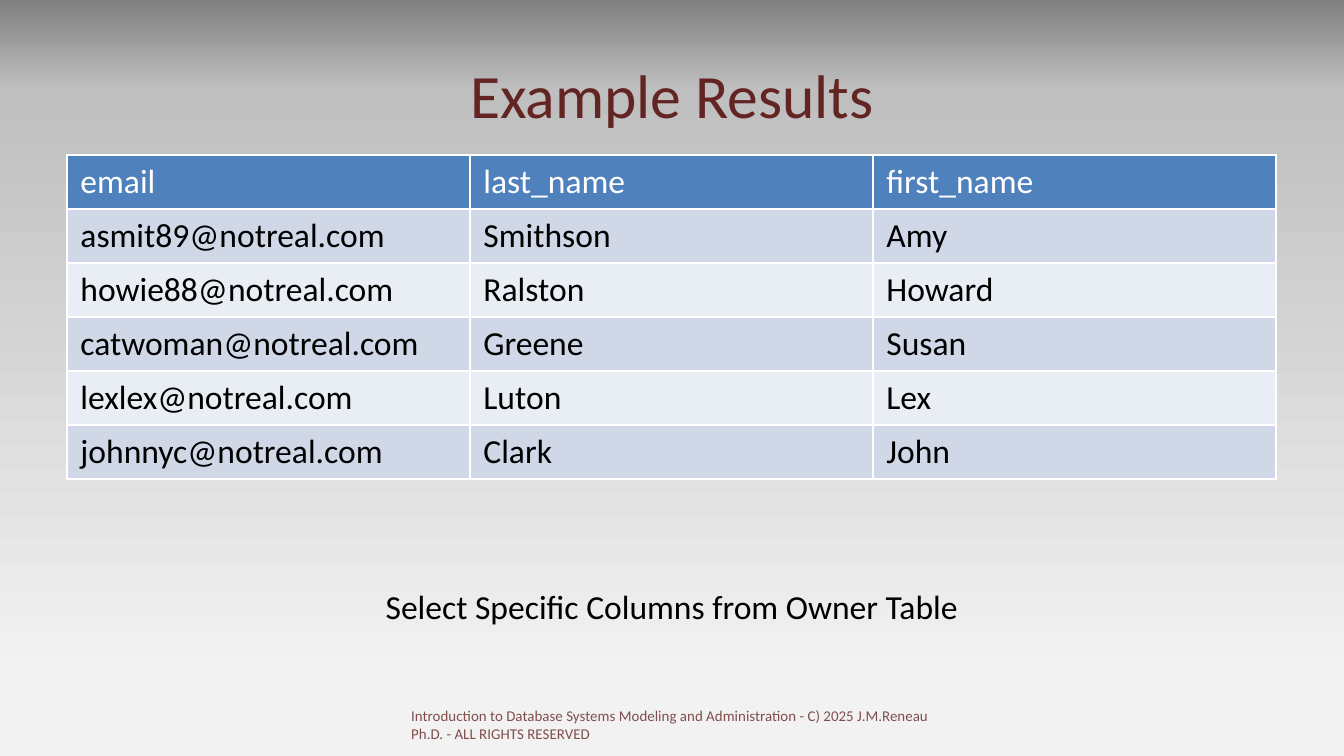
from dataclasses import dataclass

from lxml import etree
from pptx import Presentation
from pptx.dml.color import RGBColor
from pptx.enum.text import MSO_ANCHOR, PP_ALIGN
from pptx.oxml.ns import qn
from pptx.slide import Slide
from pptx.table import _Cell
from pptx.util import Pt

LEFT, CENTER = PP_ALIGN.LEFT, PP_ALIGN.CENTER
TOP, MIDDLE = MSO_ANCHOR.TOP, MSO_ANCHOR.MIDDLE
EMU_PER_PX = 914400 / 134.4
BLANK_LAYOUT = 6


@dataclass(frozen=True)
class Theme:
    font: str = "Calibri"
    title_size: int = 33
    body_size: int = 18
    footer_size: int = 8
    maroon: str = "632523"
    black: str = "000000"
    white: str = "FFFFFF"
    header_fill: str = "4F81BD"
    band_fills: tuple[str, str] = ("D0D8E8", "E9EDF4")
    border_width: int = 1
    # Position in percent and colour, from top to bottom
    background: tuple[tuple[int, str], ...] = (
        (0, "808080"), (12, "BFBFBF"), (90, "F2F2F2"))


@dataclass(frozen=True)
class Label:
    text: str
    left: int
    top: int
    width: int
    height: int
    size: int
    color: str
    align: PP_ALIGN = CENTER
    anchor: MSO_ANCHOR = TOP
    opacity: int = 100


THEME = Theme()

LABELS = (
    Label("Example Results", 67, 31, 1210, 126,
          THEME.title_size, THEME.maroon, anchor=MIDDLE),
    Label("Select Specific Columns from Owner Table", 67, 579, 1210, 75,
          THEME.body_size, THEME.black),
    Label("Introduction to Database Systems Modeling and Administration"
          " - C) 2025 J.M.Reneau Ph.D. - ALL RIGHTS RESERVED",
          398, 700, 546, 40, THEME.footer_size, THEME.maroon, LEFT,
          opacity=80),
)

OWNERS = (
    ("email", "last_name", "first_name"),
    ("asmit89@notreal.com", "Smithson", "Amy"),
    ("howie88@notreal.com", "Ralston", "Howard"),
    ("catwoman@notreal.com", "Greene", "Susan"),
    ("lexlex@notreal.com", "Luton", "Lex"),
    ("johnnyc@notreal.com", "Clark", "John"),
)
TABLE_LEFT, TABLE_TOP = 67, 155
COLUMN_WIDTH, ROW_HEIGHT = 403, 54


def px(length: int) -> int:
    return round(length * EMU_PER_PX)


def paint_background(slide: Slide) -> None:
    fill = slide.background.fill
    fill.gradient()
    fill.gradient_angle = 270
    stops = slide.element.find(".//" + qn("a:gsLst"))
    for stop in list(stops):
        stops.remove(stop)
    for position, color in THEME.background:
        stop = etree.SubElement(stops, qn("a:gs"), pos=str(position * 1000))
        etree.SubElement(stop, qn("a:srgbClr"), val=color)


def style_paragraph(paragraph, size: int, color: str, align: PP_ALIGN) -> None:
    paragraph.alignment = align
    paragraph.font.name = THEME.font
    paragraph.font.size = Pt(size)
    paragraph.font.color.rgb = RGBColor.from_string(color)


def add_label(slide: Slide, label: Label) -> None:
    shape = slide.shapes.add_textbox(
        px(label.left), px(label.top), px(label.width), px(label.height))
    frame = shape.text_frame
    frame.word_wrap = True
    frame.vertical_anchor = label.anchor
    frame.text = label.text
    style_paragraph(frame.paragraphs[0], label.size, label.color, label.align)
    if label.opacity < 100:
        for color in shape.element.iter(qn("a:srgbClr")):
            etree.SubElement(color, qn("a:alpha"),
                             val=str(label.opacity * 1000))


def add_borders(cell: _Cell) -> None:
    properties = cell._tc.get_or_add_tcPr()
    # Border lines come before the fill in the cell properties
    for index, side in enumerate(("a:lnL", "a:lnR", "a:lnT", "a:lnB")):
        line = etree.Element(qn(side), w=str(Pt(THEME.border_width)))
        fill = etree.SubElement(line, qn("a:solidFill"))
        etree.SubElement(fill, qn("a:srgbClr"), val=THEME.white)
        properties.insert(index, line)


def add_owner_table(slide: Slide) -> None:
    row_count, column_count = len(OWNERS), len(OWNERS[0])
    table = slide.shapes.add_table(
        row_count, column_count, px(TABLE_LEFT), px(TABLE_TOP),
        px(COLUMN_WIDTH * column_count), px(ROW_HEIGHT * row_count)).table
    for row_index, values in enumerate(OWNERS):
        is_header = row_index == 0
        fill = THEME.header_fill if is_header else THEME.band_fills[
            (row_index - 1) % 2]
        color = THEME.white if is_header else THEME.black
        for column_index, value in enumerate(values):
            cell = table.cell(row_index, column_index)
            cell.text = value
            cell.fill.solid()
            cell.fill.fore_color.rgb = RGBColor.from_string(fill)
            paragraph = cell.text_frame.paragraphs[0]
            style_paragraph(paragraph, THEME.body_size, color, LEFT)
            paragraph.font.bold = False
            add_borders(cell)


def main() -> None:
    presentation = Presentation()
    presentation.slide_width, presentation.slide_height = px(1344), px(756)
    slide = presentation.slides.add_slide(
        presentation.slide_layouts[BLANK_LAYOUT])
    paint_background(slide)

    # Title, query result, caption and footer
    title, *captions = LABELS
    add_label(slide, title)
    add_owner_table(slide)
    for caption in captions:
        add_label(slide, caption)
    presentation.save("out.pptx")


if __name__ == "__main__":
    main()
